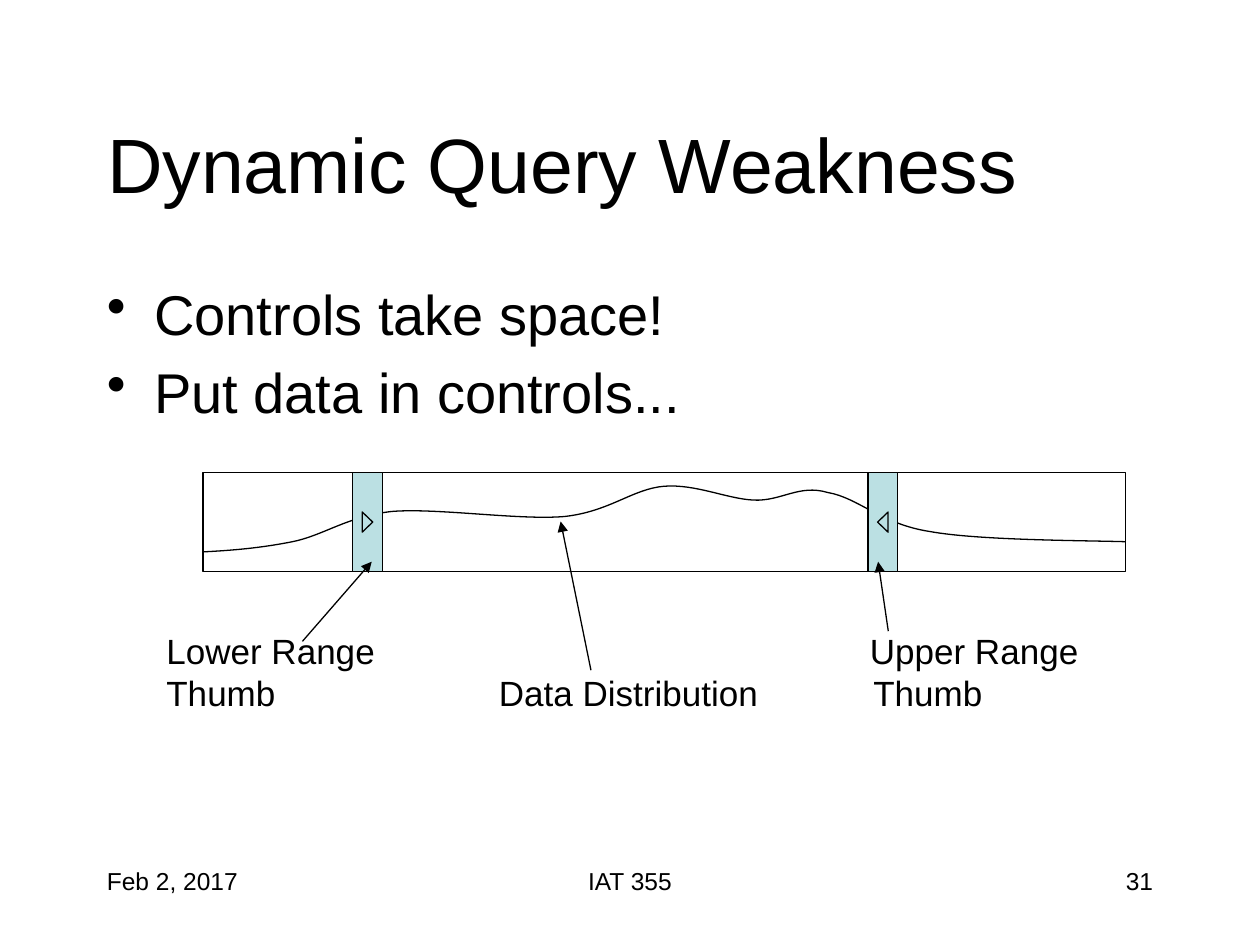
from dataclasses import dataclass
from typing import NamedTuple

from lxml.etree import SubElement
from pptx import Presentation
from pptx.dml.color import RGBColor
from pptx.enum.shapes import MSO_CONNECTOR, MSO_SHAPE
from pptx.enum.text import MSO_ANCHOR, PP_ALIGN
from pptx.oxml.ns import qn
from pptx.util import Pt


@dataclass(frozen=True)
class Theme:
    font: str = "Arial"
    ink: RGBColor = RGBColor(0, 0, 0)
    thumb: RGBColor = RGBColor(0xBB, 0xE0, 0xE3)
    title: float = 44
    body: float = 32
    label: float = 20
    footer: float = 14
    line: float = 0.75


class Box(NamedTuple):
    left: float
    top: float
    width: float
    height: float

    def in_points(self):
        return [Pt(length) for length in self]


THEME = Theme()
BULLET_INDENT = 27
THUMB_WIDTH = 17
ARROW_SIZE = (11.5, 6)
# Start point, then three points for each Bézier segment, from the slider's corner
DISTRIBUTION = [
    (0, 45.4),
    (16.6, 44.6), (33.1, 43.2), (51.1, 39.6),
    (69.1, 36), (82.1, 25.2), (108, 22.3),
    (133.9, 20.2), (180.7, 27.4), (206.6, 25.2),
    (232.6, 22.3), (245.5, 9.4), (263.5, 7.9),
    (281.5, 6.5), (299.5, 15.1), (314.6, 15.8),
    (330.5, 16.6), (340.6, 6.5), (357.1, 11.5),
    (374.4, 14.4), (387.4, 29.5), (415.4, 33.8),
    (443.5, 38.9), (504, 38.9), (527, 39.6),
]


def style_paragraph(para, size, align=PP_ALIGN.LEFT):
    para.alignment = align
    para.font.name = THEME.font
    para.font.size = Pt(size)
    para.font.color.rgb = THEME.ink


def add_text(page, box, lines, size, align=PP_ALIGN.LEFT):
    """Add a text box with one paragraph a line and return its paragraphs."""
    frame = page.shapes.add_textbox(*box.in_points()).text_frame
    frame.word_wrap = True
    frame.text = "\n".join(lines)
    for para in frame.paragraphs:
        style_paragraph(para, size, align)
    return frame.paragraphs


def style_shape(shape, fill=None):
    shape.shadow.inherit = False
    if fill is None:
        shape.fill.background()
    else:
        shape.fill.solid()
        shape.fill.fore_color.rgb = fill
    shape.line.color.rgb = THEME.ink
    shape.line.width = Pt(THEME.line)


def add_title(page, box, text):
    title = page.shapes.title
    title.left, title.top, title.width, title.height = box.in_points()
    title.text_frame.text = text
    title.text_frame.vertical_anchor = MSO_ANCHOR.MIDDLE
    style_paragraph(title.text_frame.paragraphs[0], THEME.title)


def add_bullets(page, box, lines):
    for para in add_text(page, box, lines, THEME.body):
        para.space_before = Pt(THEME.body * 0.2)
        properties = para._p.get_or_add_pPr()
        properties.set("marL", str(Pt(BULLET_INDENT)))
        properties.set("indent", str(Pt(-BULLET_INDENT)))
        bullet = SubElement(properties, qn("a:buChar"))
        bullet.set("char", "•")
        properties.find(qn("a:defRPr")).addprevious(bullet)


def add_curve(page, box, points):
    absolute = [(Pt(box.left + x), Pt(box.top + y)) for x, y in points]
    builder = page.shapes.build_freeform(*absolute[0])
    builder.add_line_segments(absolute[1:], close=False)
    curve = builder.convert_to_shape()
    style_shape(curve)
    outline = next(curve._element.iter(qn("a:path")))
    segments = outline.findall(qn("a:lnTo"))
    for start in range(0, len(segments), 3):
        bezier = SubElement(outline, qn("a:cubicBezTo"))
        for segment in segments[start:start + 3]:
            bezier.append(segment[0])
            outline.remove(segment)


def add_thumb(page, box, rotation):
    bar = page.shapes.add_shape(MSO_SHAPE.RECTANGLE, *box.in_points())
    width, height = ARROW_SIZE
    arrow_box = Box(box.left + (box.width - width) / 2,
                    box.top + (box.height - height) / 2, width, height)
    arrow = page.shapes.add_shape(MSO_SHAPE.ISOSCELES_TRIANGLE, *arrow_box.in_points())
    arrow.rotation = rotation
    for shape in (bar, arrow):
        style_shape(shape, THEME.thumb)


def add_slider(page, box):
    style_shape(page.shapes.add_shape(MSO_SHAPE.RECTANGLE, *box.in_points()))
    add_curve(page, box, DISTRIBUTION)
    for offset, rotation in ((85.5, 90), (380, 270)):
        thumb = Box(box.left + offset, box.top, THUMB_WIDTH, box.height)
        add_thumb(page, thumb, rotation)


def add_pointer(page, start, end):
    ends = [Pt(length) for length in (*start, *end)]
    pointer = page.shapes.add_connector(MSO_CONNECTOR.STRAIGHT, *ends)
    pointer.line.color.rgb = THEME.ink
    pointer.line.width = Pt(THEME.line)
    SubElement(pointer.line._get_or_add_ln(), qn("a:tailEnd")).set("type", "triangle")
    SubElement(pointer._element.spPr, qn("a:effectLst"))


def add_labels(page, box):
    rows = [("Lower Range\tUpper Range", [402]),
            ("Thumb\tData Distribution\tThumb", [190, 404])]
    paras = add_text(page, box, [text for text, _ in rows], THEME.label)
    for para, (_, stops) in zip(paras, rows):
        properties = para._p.get_or_add_pPr()
        tabs = SubElement(properties, qn("a:tabLst"))
        for stop in stops:
            tab = SubElement(tabs, qn("a:tab"))
            tab.set("pos", str(Pt(stop)))
            tab.set("algn", "l")
        properties.find(qn("a:defRPr")).addprevious(tabs)
    for start, end in (((172.8, 366.5), (212.4, 321)),
                       ((507.6, 360.7), (501.8, 321)),
                       ((337.7, 383), (320.4, 298))):
        add_pointer(page, start, end)


def add_footer(page, box):
    side, middle = 150, 228
    parts = [("Feb 2, 2017", box.left, side, PP_ALIGN.LEFT),
             ("IAT 355", box.left + (box.width - middle) / 2, middle, PP_ALIGN.CENTER),
             ("31", box.left + box.width - side, side, PP_ALIGN.RIGHT)]
    for text, left, width, align in parts:
        add_text(page, Box(left, box.top, width, box.height), [text], THEME.footer, align)


def main():
    deck = Presentation()
    deck.slide_width, deck.slide_height = Pt(720), Pt(540)
    page = deck.slides.add_slide(deck.slide_layouts[5])
    add_title(page, Box(54, 48, 612, 90), "Dynamic Query Weakness")
    add_bullets(page, Box(54, 156, 612, 324),
                ["Controls take space!", "Put data in controls..."])
    add_slider(page, Box(116, 270, 527, 56.7))
    add_labels(page, Box(88, 356.4, 574, 55.4))
    add_footer(page, Box(54, 491.5, 612, 36))
    deck.save("out.pptx")


if __name__ == "__main__":
    main()
